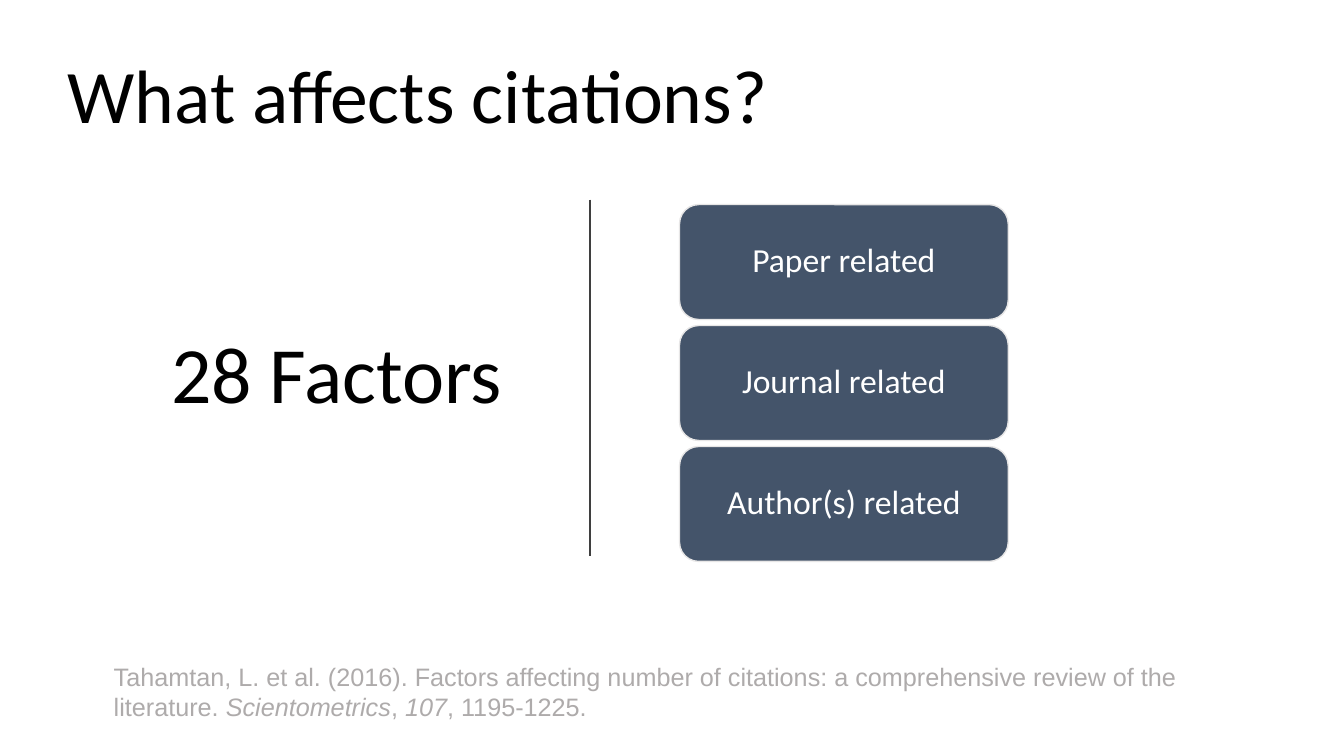
"""Build the slide on what affects citations."""
import dataclasses

import pptx
import pptx.dml.color
import pptx.enum.shapes
import pptx.enum.text
import pptx.oxml
import pptx.oxml.ns
import pptx.util

Inches = pptx.util.Inches
Align = pptx.enum.text.PP_ALIGN
Anchor = pptx.enum.text.MSO_ANCHOR


@dataclasses.dataclass(frozen=True)
class Theme:
    """Colours, fonts and type sizes of the slide."""
    ink: str = "000000"
    paper: str = "FFFFFF"
    slate: str = "44546A"
    edge: str = "E7E6E6"
    rule: str = "3F3F3F"
    muted: str = "AEABAB"
    face: str = "Calibri"
    cite_face: str = "Arial"
    head: float = 54
    fact: float = 57
    label: float = 24
    cite: float = 18


class Maker:
    """Draw each kind of element on one slide in one style."""

    def __init__(self, slide, theme):
        """Keep the slide and its theme."""
        self.slide = slide
        self.theme = theme

    def color(self, code):
        """Turn a hex code into a colour."""
        return pptx.dml.color.RGBColor.from_string(code)

    def letter(self, shape, runs, size, color, face=None, align=Align.LEFT,
               anchor=Anchor.TOP, pitch=0.9):
        """Fill a shape with one paragraph of (text, italic) runs."""
        frame = shape.text_frame
        frame.word_wrap = True
        frame.auto_size = pptx.enum.text.MSO_AUTO_SIZE.NONE
        frame.vertical_anchor = anchor
        para = frame.paragraphs[0]
        para.alignment = align
        para.line_spacing = pitch
        for text, slant in runs:
            run = para.add_run()
            run.text = text
            run.font.name = face or self.theme.face
            run.font.size = pptx.util.Pt(size)
            run.font.italic = slant
            run.font.color.rgb = self.color(color)

    def title(self, text, left, top, width, height):
        """Place and format the title."""
        shape = self.slide.shapes.title
        shape.left, shape.top = Inches(left), Inches(top)
        shape.width, shape.height = Inches(width), Inches(height)
        self.letter(shape, [(text, False)], self.theme.head, self.theme.ink,
                    anchor=Anchor.BOTTOM)

    def text(self, runs, left, top, width, height, size, color, **style):
        """Add a text box."""
        box = self.slide.shapes.add_textbox(
            Inches(left), Inches(top), Inches(width), Inches(height))
        self.letter(box, runs, size, color, **style)

    def line(self, left, top, right, bottom):
        """Add a straight rule."""
        line = self.slide.shapes.add_connector(
            pptx.enum.shapes.MSO_CONNECTOR.STRAIGHT,
            Inches(left), Inches(top), Inches(right), Inches(bottom))
        line.line.color.rgb = self.color(self.theme.rule)
        line.line.width = pptx.util.Pt(1.5)
        props = line._element.spPr
        props.append(props.makeelement(pptx.oxml.ns.qn("a:effectLst"), {}))

    def card(self, text, left, top, width, height):
        """Add a rounded card with a centred label."""
        card = self.slide.shapes.add_shape(
            pptx.enum.shapes.MSO_SHAPE.ROUNDED_RECTANGLE,
            Inches(left), Inches(top), Inches(width), Inches(height))
        card.shadow.inherit = False
        card.fill.solid()
        card.fill.fore_color.rgb = self.color(self.theme.slate)
        card.line.color.rgb = self.color(self.theme.edge)
        card.line.width = pptx.util.Pt(1)
        self.letter(card, [(text, False)], self.theme.label, self.theme.paper,
                    align=Align.CENTER, anchor=Anchor.MIDDLE)


def main():
    """Build and save the deck."""
    deck = pptx.Presentation()
    deck.slide_width, deck.slide_height = Inches(13.33), Inches(7.5)
    theme = Theme()
    maker = Maker(deck.slides.add_slide(deck.slide_layouts[5]), theme)

    maker.title("What affects citations?", 0.57, 0.14, 8.3, 1.3)
    maker.text([("28 Factors", False)], 1.59, 1.3, 3.49, 4.9,
               theme.fact, theme.ink, align=Align.RIGHT, anchor=Anchor.MIDDLE)
    maker.line(5.85, 1.98, 5.85, 5.52)
    for row, topic in enumerate(("Paper", "Journal", "Author(s)")):
        maker.card(f"{topic} related", 6.74, 2.03 + row * 1.2, 3.26, 1.14)

    source = [
        ("Tahamtan, L. et al. (2016). Factors affecting number of citations: "
         "a comprehensive review of the literature. ", False),
        ("Scientometrics", True),
        (", ", False),
        ("107", True),
        (", 1195-1225.", False),
    ]
    maker.text(source, 1.03, 6.51, 11.06, 0.71, theme.cite, theme.muted,
               face=theme.cite_face, pitch=1.0)
    deck.save("out.pptx")


if __name__ == "__main__":
    main()
